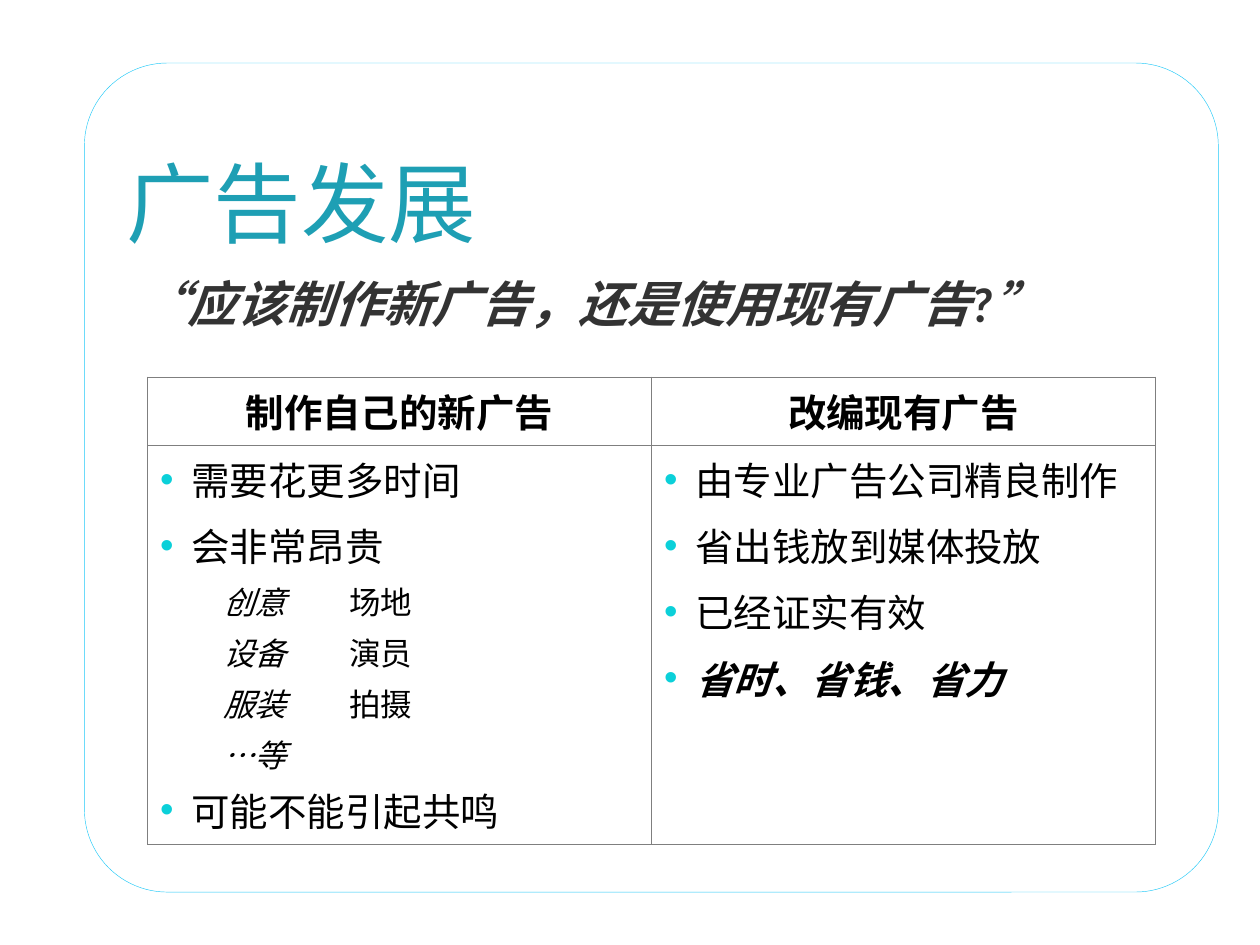
from lxml import etree
from pptx import Presentation
from pptx.dml.color import RGBColor
from pptx.enum.shapes import MSO_SHAPE
from pptx.enum.text import MSO_ANCHOR, MSO_AUTO_SIZE, PP_ALIGN
from pptx.oxml.ns import qn
from pptx.util import Inches, Pt

ROUND = MSO_SHAPE.ROUNDED_RECTANGLE
BOTTOM, MIDDLE = MSO_ANCHOR.BOTTOM, MSO_ANCHOR.MIDDLE
LEFT, CENTER = PP_ALIGN.LEFT, PP_ALIGN.CENTER
NO_FIT = MSO_AUTO_SIZE.NONE
TEAL = RGBColor(0x1E, 0x9F, 0xB4)
SKY = RGBColor(0x20, 0xC9, 0xF8)
DARK = RGBColor(0x33, 0x33, 0x33)
BLACK = RGBColor(0, 0, 0)
GRAY = RGBColor(0x7F, 0x7F, 0x7F)
AQUA = RGBColor(0x0B, 0xD0, 0xD9)
FONT, SERIF = "Calibri", "Vollkorn"

HEADS = ["制作自己的新广告", "改编现有广告"]
COSTS = [("创意\t", "场地"), ("设备\t", "演员"), ("服装\t", "拍摄"), ("…等",)]
GAINS = ["由专业广告公司精良制作", "省出钱放到媒体投放", "已经证实有效"]


def style(run, size, color, bold=False, italic=False, face=FONT):
    """Format one run."""
    font = run.font
    font.name, font.size = face, Pt(size)
    font.bold, font.italic = bold, italic
    font.color.rgb = color


def tint(parent, tag, color):
    """Add an element that holds a colour."""
    node = etree.SubElement(parent, qn(tag))
    etree.SubElement(node, qn("a:srgbClr")).set("val", str(color))


def indent(para, left, first):
    """Set the left margin and first-line indent."""
    props = para._p.get_or_add_pPr()
    props.set("marL", str(Inches(left)))
    props.set("indent", str(Inches(first)))
    return props


def next_para(frame):
    """Return the empty first paragraph or a new one."""
    first = frame.paragraphs[0]
    return frame.add_paragraph() if first.runs else first


def bullet(frame, text, after=6, strong=False):
    """Add a bulleted line."""
    para = next_para(frame)
    props = indent(para, 0.25, -0.25)
    tint(props, "a:buClr", AQUA)
    etree.SubElement(props, qn("a:buFont")).set("typeface", "Arial")
    etree.SubElement(props, qn("a:buChar")).set("char", "•")
    para.space_after = Pt(after)
    para.text = text
    style(para.runs[0], 22, BLACK, strong, strong)


def cost(frame, parts):
    """Add an indented line with an italic and a plain part."""
    para = next_para(frame)
    para.level = 1
    indent(para, 0.5, 0)
    para.space_after = Pt(3)
    for part, face in zip(parts, (FONT, SERIF)):
        run = para.add_run()
        run.text = part
        style(run, 18, BLACK, italic=face == FONT, face=face)


def border(cell):
    """Draw thin lines round a cell and clear its fill."""
    props = cell._tc.get_or_add_tcPr()
    for side in ("a:lnL", "a:lnR", "a:lnT", "a:lnB"):
        line = etree.SubElement(props, qn(side))
        line.set("w", str(Pt(0.25)))
        tint(line, "a:solidFill", GRAY)
    cell.fill.background()


def add_frame(slide, box):
    """Draw the rounded outline."""
    shape = slide.shapes.add_shape(ROUND, *box)
    shape.adjustments[0] = 0.1
    shape.shadow.inherit = False
    shape.fill.background()
    shape.line.color.rgb = SKY
    shape.line.width = Pt(0.25)


def add_title(slide, box):
    """Place and format the title."""
    title = slide.shapes.title
    title.left, title.top, title.width, title.height = box
    frame = title.text_frame
    frame.text = "广告发展"
    frame.auto_size, frame.vertical_anchor = NO_FIT, BOTTOM
    frame.margin_left = frame.margin_right = frame.margin_bottom = 0
    frame.margin_top = Inches(0.05)
    para = frame.paragraphs[0]
    para.alignment = LEFT
    style(para.runs[0], 50, TEAL)


def add_quote(slide, box):
    """Write the question under the title."""
    frame = slide.shapes.add_textbox(*box).text_frame
    frame.word_wrap = True
    frame.text = "“应该制作新广告，还是使用现有广告?”"
    para = frame.paragraphs[0]
    indent(para, 0.25, -0.25)
    style(para.runs[0], 28, DARK, True, True)


def add_choices(slide, box):
    """Build the table that compares both choices."""
    table = slide.shapes.add_table(2, 2, *box).table
    table.first_row = table.horz_banding = False
    table.rows[0].height = Inches(0.54)
    table.rows[1].height = box[3] - Inches(0.54)
    for cell in table.iter_cells():
        border(cell)
    for col, head in enumerate(HEADS):
        cell = table.cell(0, col)
        cell.text = head
        cell.vertical_anchor = MIDDLE
        para = cell.text_frame.paragraphs[0]
        para.alignment = CENTER
        style(para.runs[0], 22, BLACK, True)
    make, adapt = (table.cell(1, col).text_frame for col in range(2))
    bullet(make, "需要花更多时间")
    bullet(make, "会非常昂贵", 3)
    for parts in COSTS:
        cost(make, parts)
    bullet(make, "可能不能引起共鸣", 3)
    for gain in GAINS:
        bullet(adapt, gain)
    bullet(adapt, "省时、省钱、省力", strong=True)


def inch(*sides):
    """Turn numbers into a box of lengths."""
    return [Inches(side) for side in sides]


def main():
    """Build and save the slide."""
    deck = Presentation()
    deck.slide_width, deck.slide_height = inch(10, 7.5)
    slide = deck.slides.add_slide(deck.slide_layouts[5])
    add_frame(slide, inch(0.67, 0.5, 9, 6.58))
    add_title(slide, inch(1, 0.77, 8.42, 1.25))
    add_quote(slide, inch(1, 2.12, 8.42, 0.6))
    add_choices(slide, inch(1.17, 2.99, 8, 3.71))
    deck.save("out.pptx")


if __name__ == "__main__":
    main()
